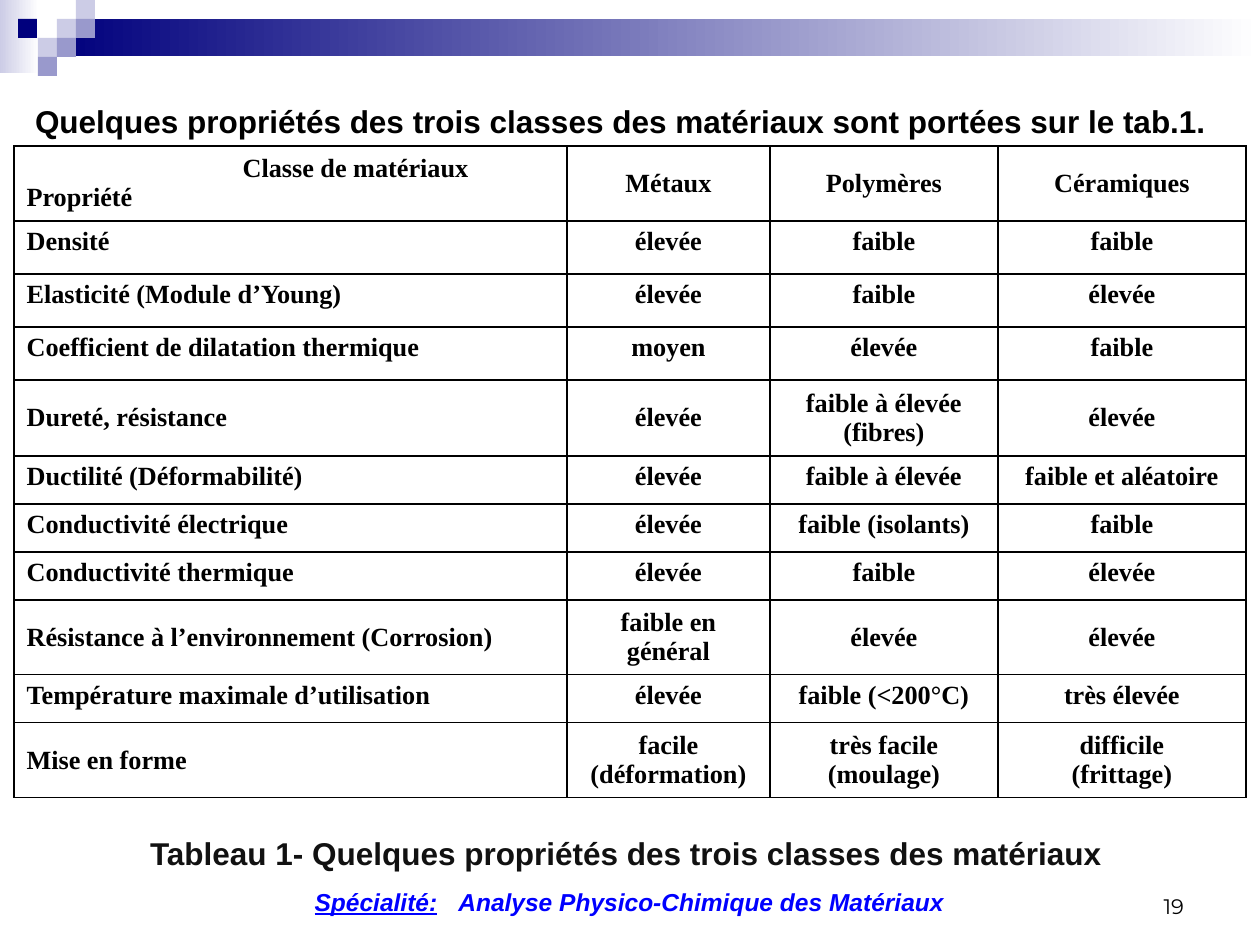
import pptx
import pptx.util
import pptx.dml.color
import pptx.enum.shapes
import pptx.enum.text
import pptx.oxml
import pptx.oxml.ns

RGBColor = pptx.dml.color.RGBColor
ALIGN = pptx.enum.text.PP_ALIGN
ANCHOR = pptx.enum.text.MSO_ANCHOR

EMU_PER_PX = 914400 / 126

BLACK = RGBColor(0x00, 0x00, 0x00)
WHITE = RGBColor(0xFF, 0xFF, 0xFF)
CAPTION_GRAY = RGBColor(0x11, 0x11, 0x11)
FOOTER_BLUE = RGBColor(0x00, 0x00, 0xFF)
NAVY = RGBColor(0x00, 0x00, 0x7D)
LILAC = RGBColor(0xCC, 0xCC, 0xE6)
LAVENDER = RGBColor(0x99, 0x99, 0xCC)


def px(*lengths):
    return [pptx.util.Emu(round(length * EMU_PER_PX)) for length in lengths]


def write(paragraph, text, font="Arial", size=18, color=BLACK, bold=True,
          italic=False, underline=False, align=ALIGN.LEFT):
    """Add a formatted run to the paragraph and return it."""
    paragraph.alignment = align
    run = paragraph.add_run()
    run.text = text
    run.font.name = font
    run.font.size = pptx.util.Pt(size)
    run.font.color.rgb = color
    run.font.bold = bold
    run.font.italic = italic
    run.font.underline = underline
    return run


presentation = pptx.Presentation()
presentation.slide_width, presentation.slide_height = px(1260, 945)
slide = presentation.slides.add_slide(presentation.slide_layouts[5])

# Banner: two fading bars, then the small squares
banner = [
    (0, 0, 39, 73, LILAC, True),
    (57, 19, 1203, 37, NAVY, True),
]
squares = [
    (57, 19, LILAC), (76, 0, LILAC), (76, 19, LAVENDER), (38, 38, LILAC),
    (18, 19, NAVY), (57, 38, LAVENDER), (38, 57, LAVENDER),
]
banner += [(left, top, 19, 19, color, False) for left, top, color in squares]
for left, top, width, height, color, fades in banner:
    shape = slide.shapes.add_shape(
        pptx.enum.shapes.MSO_SHAPE.RECTANGLE, *px(left, top, width, height))
    shape.shadow.inherit = False
    shape.line.fill.background()
    if fades:
        shape.fill.gradient()
        shape.fill.gradient_angle = 0
        for stop, stop_color, position in zip(
                shape.fill.gradient_stops, (color, WHITE), (0, 1)):
            stop.color.rgb = stop_color
            stop.position = position
    else:
        shape.fill.solid()
        shape.fill.fore_color.rgb = color

# Title, caption, footer and slide number
title = slide.shapes.title
title.left, title.top, title.width, title.height = px(35, 100, 1205, 42)
caption = slide.shapes.add_textbox(*px(0, 832, 1252, 42))
footer = slide.shapes.add_textbox(*px(2, 880, 1255, 43))
number = slide.shapes.add_textbox(*px(903, 889, 281, 34))
for shape in (title, caption, footer, number):
    frame = shape.text_frame
    frame.word_wrap = True
    frame.auto_size = pptx.enum.text.MSO_AUTO_SIZE.NONE
    frame.vertical_anchor = ANCHOR.MIDDLE
    frame.margin_left = frame.margin_right = 0
    frame.margin_top = frame.margin_bottom = 0

write(title.text_frame.paragraphs[0],
      "Quelques propriétés des trois classes des matériaux sont portées sur le tab.1.")
write(caption.text_frame.paragraphs[0],
      "Tableau 1- Quelques propriétés des trois classes des matériaux",
      color=CAPTION_GRAY, align=ALIGN.CENTER)
footer_format = dict(size=14, color=FOOTER_BLUE, italic=True, align=ALIGN.CENTER)
footer_line = footer.text_frame.paragraphs[0]
write(footer_line, "Spécialité:", underline=True, **footer_format)
gap = write(footer_line, " ", **footer_format)
gap.font._element.set("spc", "800")  # widens the gap after the label
write(footer_line, "Analyse Physico-Chimique des Matériaux", **footer_format)
write(number.text_frame.paragraphs[0], "19", font="Montserrat", size=12,
      bold=False, align=ALIGN.RIGHT)

# Table of properties
rows = [
    (75, "Classe de matériaux\nPropriété", "Métaux", "Polymères", "Céramiques"),
    (53, "Densité", "élevée", "faible", "faible"),
    (53, "Elasticité (Module d’Young)", "élevée", "faible", "élevée"),
    (53, "Coefficient de dilatation thermique", "moyen", "élevée", "faible"),
    (76, "Dureté, résistance", "élevée", "faible à élevée (fibres)", "élevée"),
    (48, "Ductilité (Déformabilité)", "élevée", "faible à élevée", "faible et aléatoire"),
    (48, "Conductivité électrique", "élevée", "faible (isolants)", "faible"),
    (48, "Conductivité thermique", "élevée", "faible", "élevée"),
    (75, "Résistance à l’environnement (Corrosion)", "faible en général", "élevée", "élevée"),
    (48, "Température maximale d’utilisation", "élevée", "faible (<200°C)", "très élevée"),
    (75, "Mise en forme", "facile (déformation)", "très facile (moulage)",
     "difficile\n(frittage)"),
]
column_widths = [553, 203, 228, 248]
TALL_ROW = 75
BORDER = ('<a:{side} %s w="12700"><a:solidFill><a:srgbClr val="{color}"/>'
          '</a:solidFill></a:{side}>' % pptx.oxml.ns.nsdecls("a"))

table = slide.shapes.add_table(
    len(rows), len(column_widths),
    *px(14, 146, sum(column_widths), sum(row[0] for row in rows))).table
table.first_row = False
table.horz_banding = False
for column, width in zip(table.columns, column_widths):
    column.width = px(width)[0]

for row_index, (height, *texts) in enumerate(rows):
    table.rows[row_index].height = px(height)[0]
    for column_index, text in enumerate(texts):
        cell = table.cell(row_index, column_index)
        cell.vertical_anchor = ANCHOR.MIDDLE if height >= TALL_ROW else ANCHOR.TOP
        properties = cell._tc.get_or_add_tcPr()
        for side in ("lnL", "lnR", "lnT", "lnB"):
            properties.append(pptx.oxml.parse_xml(BORDER.format(side=side, color=BLACK)))
        cell.fill.background()
        for line_index, line in enumerate(text.split("\n")):
            frame = cell.text_frame
            paragraph = frame.add_paragraph() if line_index else frame.paragraphs[0]
            write(paragraph, line, font="Times New Roman", size=15,
                  align=ALIGN.CENTER if column_index else ALIGN.LEFT)

# The column heading of the corner cell is indented
corner_line = table.cell(0, 0).text_frame.paragraphs[0]
corner_line._p.get_or_add_pPr().set("marL", str(px(216)[0]))

presentation.save("out.pptx")
